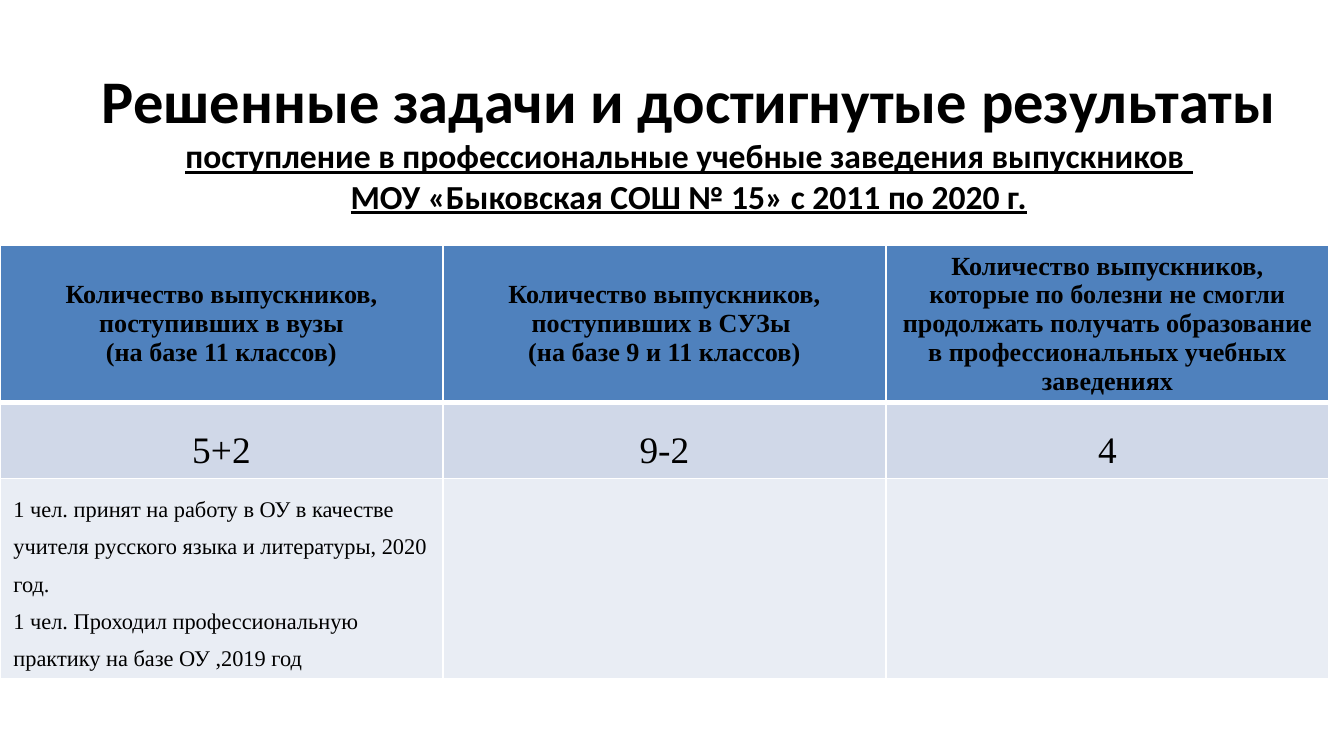
from pptx import Presentation
from pptx import util as u
from pptx.dml.color import RGBColor
from pptx.enum import text
from pptx.oxml import parse_xml
from pptx.oxml.ns import nsdecls

PX = 914400 / 134.4
HUES = {"ink": "000000", "line": "FFFFFF", "head": "4F81BD",
        "mid": "D0D8E8", "pale": "E9EDF4"}
SERIF = "Times New Roman"
MID = text.MSO_ANCHOR.MIDDLE
CENTER, LEFT = text.PP_ALIGN.CENTER, text.PP_ALIGN.LEFT

HEADS = [
    ["Количество выпускников, поступивших в вузы", "(на базе 11 классов)"],
    ["Количество выпускников, поступивших в СУЗы ", "(на базе 9 и 11 классов)"],
    ["Количество выпускников, которые по болезни не смогли продолжать "
     "получать образование в профессиональных учебных заведениях"],
]
COUNTS = [["5+2"], ["9-2"], ["4"]]
NOTES = [
    ["1 чел. принят на работу в ОУ в качестве учителя русского языка "
     "и литературы, 2020 год.",
     "1 чел. Проходил профессиональную практику на базе ОУ ,2019 год"],
    [], [],
]


def px(n):
    return u.Emu(round(n * PX))


def hue(name):
    return RGBColor.from_string(HUES[name])


def style(font, size, face, bold):
    font.size, font.name, font.bold = u.Pt(size), face, bold
    font.color.rgb = hue("ink")


def add_title(slide):
    box = slide.shapes.title
    box.left, box.top, box.width, box.height = px(71), px(78), px(1236), px(145)
    frame = box.text_frame
    frame.auto_size = text.MSO_AUTO_SIZE.NONE
    frame.vertical_anchor = MID
    frame.margin_bottom = px(29)
    para = frame.paragraphs[0]
    para.alignment = CENTER
    lines = [("Решенные задачи и достигнутые результаты", 32.4, False),
             ("поступление в профессиональные учебные заведения выпускников ", 18, True),
             ("МОУ «Быковская СОШ №\u00a015» с 2011 по 2020 г.", 18, True)]
    for i, (words, size, under) in enumerate(lines):
        if i:
            para.add_line_break()
        run = para.add_run()
        run.text = words
        style(run.font, size, "Calibri", True)
        run.font.underline = under


def add_edges(cell, base):
    props = cell._tc.get_or_add_tcPr()
    edges = [("L", 1), ("R", 1), ("T", 1), ("B", base)]
    for i, (side, width) in enumerate(edges):
        props.insert(i, parse_xml(
            f'<a:ln{side} {nsdecls("a")} w="{u.Pt(width)}"><a:solidFill>'
            f'<a:srgbClr val="{HUES["line"]}"/></a:solidFill></a:ln{side}>'))


def fill_cell(cell, lines, fill, size, align, bold, gap, base):
    cell.fill.solid()
    cell.fill.fore_color.rgb = hue(fill)
    cell.vertical_anchor = MID
    add_edges(cell, base)
    frame = cell.text_frame
    for i, words in enumerate(lines):
        para = frame.add_paragraph() if i else frame.paragraphs[0]
        para.text = words
        para.alignment = align
        para.line_spacing = gap
        style(para.font, size, SERIF, bold)


def add_grid(slide):
    rows = [(HEADS, 157, ("head", 14, CENTER, True, 1.0, 3)),
            (COUNTS, 75, ("mid", 20, CENTER, False, 1.5, 1)),
            (NOTES, 200, ("pale", 12, LEFT, False, 1.5, 1))]
    high = sum(row[1] for row in rows)
    grid = slide.shapes.add_table(
        len(rows), len(HEADS), 0, px(245), px(1329), px(high)).table
    for col in grid.columns:
        col.width = px(443)
    for r, (cells, tall, look) in enumerate(rows):
        grid.rows[r].height = px(tall)
        for c, lines in enumerate(cells):
            fill_cell(grid.cell(r, c), lines, *look)


def main():
    deck = Presentation()
    deck.slide_width, deck.slide_height = px(1344), px(756)
    slide = deck.slides.add_slide(deck.slide_layouts[5])
    add_title(slide)
    add_grid(slide)
    deck.save("out.pptx")


if __name__ == "__main__":
    main()
